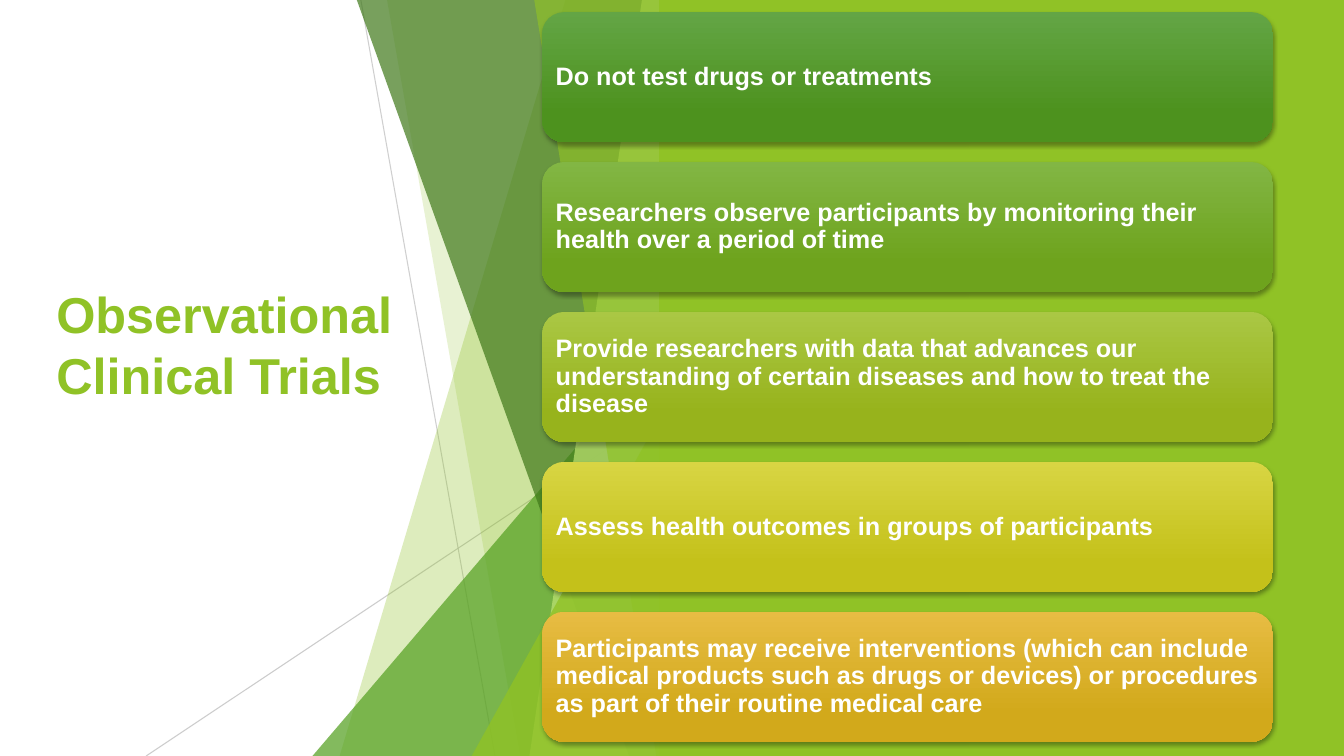
import pptx
import pptx.dml.color
import pptx.enum.shapes
import pptx.enum.text
import pptx.oxml
import pptx.oxml.ns
import pptx.util
import lxml.etree

prs = pptx.Presentation()
prs.slide_width = pptx.util.Emu(12192000)
prs.slide_height = pptx.util.Emu(6858000)
s = prs.slides.add_slide(prs.slide_layouts[6])
shapes = s.shapes
MSO = pptx.enum.shapes.MSO_SHAPE
qn = pptx.oxml.ns.qn


def share(x, y):
    return round(prs.slide_width * x / 100), round(prs.slide_height * y / 100)


def paint(color_format, color, opacity=100):
    color_format.rgb = pptx.dml.color.RGBColor.from_string(color)
    if opacity < 100:
        for clr in color_format._xFill.iter(qn("a:srgbClr")):
            lxml.etree.SubElement(clr, qn("a:alpha"), val=str(opacity * 1000))


tb = shapes.add_textbox(*share(3.45, 20.13), *share(29.1, 59.73))
tf = tb.text_frame
tf.word_wrap = True
tf.vertical_anchor = pptx.enum.text.MSO_ANCHOR.MIDDLE
tf.margin_bottom = pptx.util.Inches(0.73)
p = tf.paragraphs[0]
p.text = "Observational Clinical Trials"
p.font.name, p.font.size, p.font.bold = "Arial", pptx.util.Pt(36), True
paint(p.font.color, "90C226")

rays = [((26.85, 0), (36.83, 100), 75), ((49.96, 53.73), (10.87, 100), 80)]
for start, end, opacity in rays:
    ray = shapes.add_connector(pptx.enum.shapes.MSO_CONNECTOR.STRAIGHT, *share(*start), *share(*end))
    ray.line.width = pptx.util.Pt(0.75)
    ray.line.fill.solid()
    paint(ray.line.color, "BFBFBF")
    for clr in ray.line._ln.iter(qn("a:srgbClr")):
        lxml.etree.SubElement(clr, qn("a:alpha"), val=str(opacity * 1000))
    lxml.etree.SubElement(ray._element.spPr, qn("a:effectLst"))

fold = 49.97
facets = [
    ("band", 42.07, 25.27, "90C226", 30),
    ("band", 28.8, 38.7, "90C226", 20),
    ("triangle", 44.4, 23.25, "54A021", 72),
    ("band", 26.55, 46.8, "3F7819", 70),
    ("band", 47.77, 39.4, "C0E474", 70),
    ("band", 39.75, 48.83, "90C226", 65),
    ("triangle", 52.4, 35.1, "90C226", 80),
]
for kind, top, bottom, color, opacity in facets:
    if kind == "band":
        fb = shapes.build_freeform(*share(top, 0))
        fb.add_line_segments([share(fold, 0), share(fold, 100), share(bottom, 100)])
        sp = fb.convert_to_shape()
    else:
        sp = shapes.add_shape(MSO.ISOSCELES_TRIANGLE, *share(bottom, top), *share(fold - bottom, 100 - top))
        sp.adjustments[0] = 1
    sp.shadow.inherit = False
    sp.line.fill.background()
    sp.fill.solid()
    paint(sp.fill.fore_color, color, opacity)

panel = shapes.add_shape(MSO.RECTANGLE, *share(49.05, 0), *share(50.95, 100))
panel.shadow.inherit = False
panel.line.fill.background()
panel.fill.solid()
paint(panel.fill.fore_color, "90C226")

cards = [
    ("Do not test drugs or treatments", "63A545", "4D921E"),
    ("Researchers observe participants by monitoring their health over a period of time", "82B644", "6EA31D"),
    ("Provide researchers with data that advances our understanding of certain diseases "
     "and how to treat the disease", "AAC744", "97B31C"),
    ("Assess health outcomes in groups of participants", "D8D543", "C4C11A"),
    ("Participants may receive interventions (which can include medical products such as drugs "
     "or devices) or procedures as part of their routine medical care", "E7BC43", "D2A91B"),
]
for i, (text, light, dark) in enumerate(cards):
    card = shapes.add_shape(MSO.ROUNDED_RECTANGLE, *share(40.35, 1.6 + 19.83 * i), *share(54.37, 17.2))
    card.line.fill.background()
    card.fill.gradient()
    card.fill.gradient_angle = 270
    for stop, position, color in zip(card.fill.gradient_stops, (0, 0.78), (light, dark)):
        stop.position = position
        paint(stop.color, color)
    card.shadow.inherit = False
    card._element.spPr.find(qn("a:effectLst")).append(pptx.oxml.parse_xml(
        '<a:outerShdw xmlns:a="http://schemas.openxmlformats.org/drawingml/2006/main" '
        'blurRad="38100" dist="25400" dir="5400000" rotWithShape="0">'
        '<a:srgbClr val="000000"><a:alpha val="35000"/></a:srgbClr></a:outerShdw>'))
    tf = card.text_frame
    tf.word_wrap = True
    tf.vertical_anchor = pptx.enum.text.MSO_ANCHOR.MIDDLE
    tf.margin_left = tf.margin_right = pptx.util.Inches(0.07)
    tf.margin_top = tf.margin_bottom = pptx.util.Inches(0.07)
    p = tf.paragraphs[0]
    p.text = text
    p.alignment = pptx.enum.text.PP_ALIGN.LEFT
    p.line_spacing = 0.9
    p.font.name, p.font.size, p.font.bold = "Arial", pptx.util.Pt(18), True
    paint(p.font.color, "FFFFFF")

prs.save("out.pptx")
